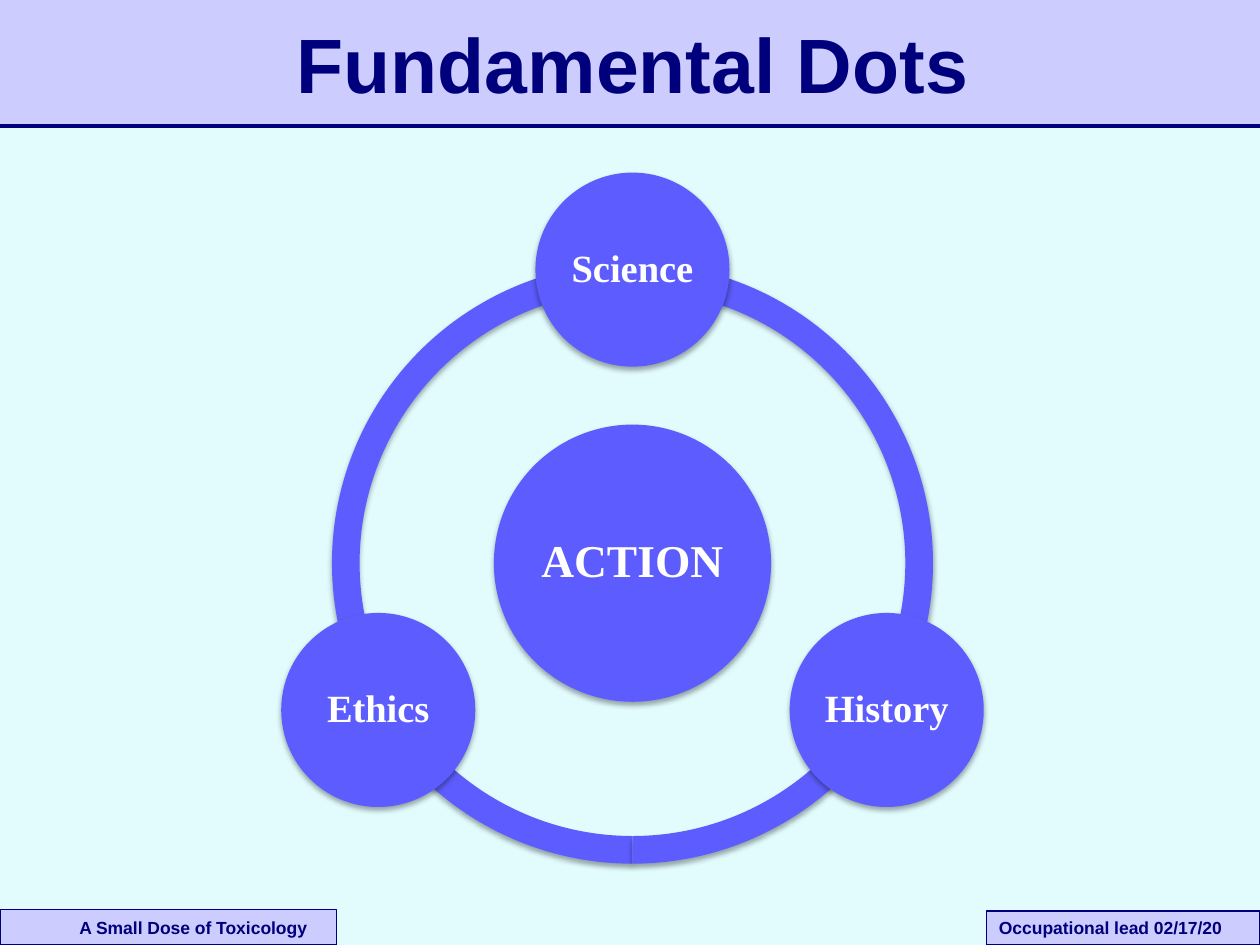
import math

import pptx
import pptx.dml.color
import pptx.enum.shapes
import pptx.enum.text
import pptx.oxml
import pptx.oxml.ns
import pptx.util

Inches, Pt = pptx.util.Inches, pptx.util.Pt
SHAPE = pptx.enum.shapes.MSO_SHAPE
ALIGN = pptx.enum.text.PP_ALIGN
ANCHOR = pptx.enum.text.MSO_ANCHOR

SHADOW_XML = (
    f'<a:effectLst {pptx.oxml.ns.nsdecls("a")}>'
    '<a:outerShdw blurRad="40000" dist="23000" dir="5400000" rotWithShape="0">'
    '<a:srgbClr val="000000"><a:alpha val="35000"/></a:srgbClr>'
    '</a:outerShdw></a:effectLst>'
)
NO_EFFECT_XML = f'<a:effectLst {pptx.oxml.ns.nsdecls("a")}/>'


def color(hex_string):
    return pptx.dml.color.RGBColor.from_string(hex_string)


def write(frame, text, *, size, font, ink, align=ALIGN.LEFT, inset=0.05,
          left_inset=None, spacing=1.0, wrap=True):
    frame.word_wrap = wrap
    frame.vertical_anchor = ANCHOR.MIDDLE
    frame.margin_top = frame.margin_bottom = frame.margin_right = Inches(inset)
    frame.margin_left = Inches(inset if left_inset is None else left_inset)
    paragraph = frame.paragraphs[0]
    paragraph.text = text
    paragraph.alignment = align
    paragraph.line_spacing = spacing
    paragraph.font.size = Pt(size)
    paragraph.font.name = font
    paragraph.font.bold = True
    paragraph.font.color.rgb = color(ink)


class DotsSlide:
    navy, lavender, violet = "00007D", "CCCCFF", "5D5DFF"
    white, pale = "FFFFFF", "E2FCFE"
    sans, serif = "Arial", "Times New Roman"

    def __init__(self, deck):
        self.slide = deck.slides.add_slide(deck.slide_layouts[5])
        self.shapes = self.slide.shapes
        background = self.slide.background.fill
        background.solid()
        background.fore_color.rgb = color(self.pale)

    def block(self, kind, left, top, width, height, fill, border=None):
        shape = self.shapes.add_shape(
            kind, Inches(left), Inches(top), Inches(width), Inches(height))
        shape.shadow.inherit = False
        shape.fill.solid()
        shape.fill.fore_color.rgb = color(fill)
        if border:
            shape.line.color.rgb = color(border)
            shape.line.width = Pt(0.75)
        else:
            shape.line.fill.background()
        return shape

    def round_part(self, kind, x, y, diameter):
        shape = self.block(kind, x - diameter / 2, y - diameter / 2,
                           diameter, diameter, self.violet)
        properties = shape.element.spPr
        properties.remove(properties.find(pptx.oxml.ns.qn("a:effectLst")))
        properties.append(pptx.oxml.parse_xml(SHADOW_XML))
        return shape

    def arc(self, x, y, diameter, start, end):
        arc = self.round_part(SHAPE.BLOCK_ARC, x, y, diameter)
        # Angles are stored in 60000ths of a degree, adjustments in 100000ths
        arc.adjustments[0] = start * 0.6
        arc.adjustments[1] = end * 0.6
        arc.adjustments[2] = 0.046

    def dot(self, text, x, y, diameter, size):
        dot = self.round_part(SHAPE.OVAL, x, y, diameter)
        write(dot.text_frame, text, size=size, font=self.serif, ink=self.white,
              align=ALIGN.CENTER, inset=0.03, spacing=0.9)

    def rule(self, y):
        rule = self.shapes.add_connector(
            pptx.enum.shapes.MSO_CONNECTOR.STRAIGHT,
            Inches(0), Inches(y), Inches(10), Inches(y))
        rule.line.color.rgb = color(self.navy)
        rule.line.width = Pt(2)
        rule.element.spPr.append(pptx.oxml.parse_xml(NO_EFFECT_XML))

    def footer(self, text, left, top, width, left_inset):
        footer = self.block(SHAPE.RECTANGLE, left, top, width, 7.5 - top,
                            self.lavender, self.navy)
        write(footer.text_frame, text, size=10, font=self.sans, ink=self.navy,
              left_inset=left_inset)

    def title(self, text):
        title = self.shapes.title
        title.left, title.top = Inches(2.23), Inches(0.08)
        title.width, title.height = Inches(5.59), Inches(0.84)
        write(title.text_frame, text, size=44, font=self.sans, ink=self.navy,
              align=ALIGN.CENTER, wrap=False)
        # Bring the title in front of the header band
        self.shapes._spTree.append(title.element)


def main():
    deck = pptx.Presentation()
    deck.slide_width, deck.slide_height = Inches(10), Inches(7.5)
    page = DotsSlide(deck)

    # Header band and footers
    page.block(SHAPE.RECTANGLE, 0, 0, 10, 1, page.lavender)
    page.rule(1)
    page.footer("A Small Dose of Toxicology", 0, 7.22, 2.67, 0.63)
    page.footer("Occupational lead 02/17/20", 7.83, 7.23, 2.17, 0.1)

    # Ring of three arcs around the central dot
    center_x, center_y, orbit = 5.02, 4.47, 2.33
    for start, end in ((90, 162), (18, 90), (162, 18)):
        page.arc(center_x, center_y, 4.77, start, end)
    page.dot("ACTION", center_x, center_y, 2.2, 26)

    # Outer dots, a third of a turn apart, clockwise from the top
    for index, topic in enumerate(("Science", "History", "Ethics")):
        angle = math.radians(120 * index - 90)
        page.dot(topic, center_x + orbit * math.cos(angle),
                 center_y + orbit * math.sin(angle), 1.54, 22)

    page.title("Fundamental Dots")
    deck.save("out.pptx")


if __name__ == "__main__":
    main()
